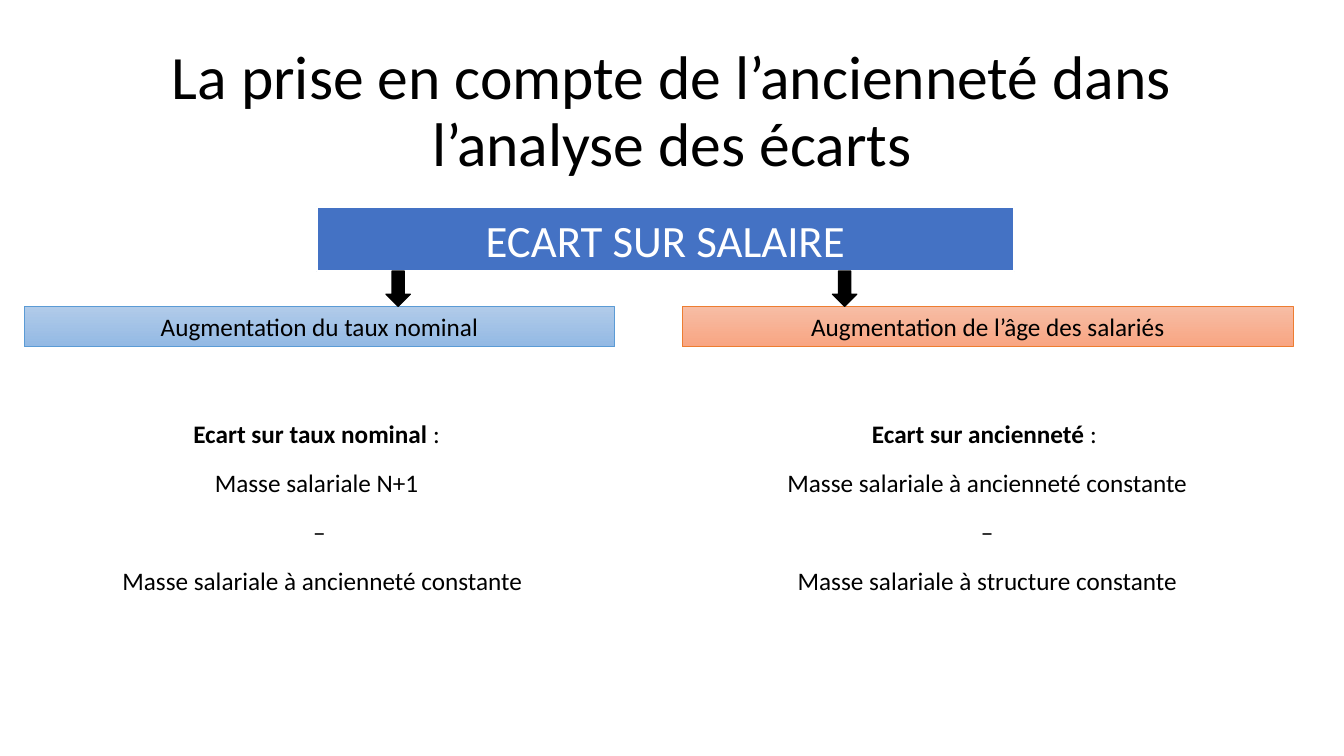
from dataclasses import dataclass

from pptx import Presentation
from pptx.dml.color import RGBColor
from pptx.enum.shapes import MSO_SHAPE
from pptx.enum.text import MSO_ANCHOR, MSO_AUTO_SIZE, PP_ALIGN
from pptx.shapes.autoshape import Shape
from pptx.slide import Slide
from pptx.text.text import TextFrame
from pptx.util import Cm, Pt

RECTANGLE = MSO_SHAPE.RECTANGLE
DOWN_ARROW = MSO_SHAPE.DOWN_ARROW
MIDDLE = MSO_ANCHOR.MIDDLE
CENTER = PP_ALIGN.CENTER
NO_AUTOFIT = MSO_AUTO_SIZE.NONE
FIT_SHAPE = MSO_AUTO_SIZE.SHAPE_TO_FIT_TEXT

BLACK = RGBColor(0x00, 0x00, 0x00)
WHITE = RGBColor(0xFF, 0xFF, 0xFF)
BANNER_BLUE = RGBColor(0x44, 0x72, 0xC4)
BLUE_LINE = RGBColor(0x5B, 0x9B, 0xD5)
BLUE_TOP = RGBColor(0xB1, 0xCB, 0xE9)
BLUE_BOTTOM = RGBColor(0x93, 0xB9, 0xE4)
ORANGE_LINE = RGBColor(0xED, 0x7D, 0x31)
ORANGE_TOP = RGBColor(0xF7, 0xBD, 0xA5)
ORANGE_BOTTOM = RGBColor(0xF8, 0xA5, 0x82)

FONT = "Calibri"
BODY_SIZE = 18
ARROW_TOP, CAUSE_TOP, FORMULA_TOP = 6.83, 7.72, 10.31


@dataclass(frozen=True)
class Area:
    left: float
    top: float
    width: float
    height: float

    def lengths(self) -> tuple[Cm, Cm, Cm, Cm]:
        return Cm(self.left), Cm(self.top), Cm(self.width), Cm(self.height)


@dataclass(frozen=True)
class Branch:
    cause: str
    cause_area: Area
    gradient: tuple[RGBColor, RGBColor]
    line: RGBColor
    arrow_left: float
    heading: str
    terms: tuple[str, ...]
    formula_area: Area


BRANCHES = (
    Branch("Augmentation du taux nominal", Area(0.61, CAUSE_TOP, 14.88, 1.02),
           (BLUE_TOP, BLUE_BOTTOM), BLUE_LINE, 9.73,
           "Ecart sur taux nominal",
           ("Masse salariale N+1 ", "–", " Masse salariale à ancienneté constante"),
           Area(0.61, FORMULA_TOP, 14.88, 4.8)),
    Branch("Augmentation de l’âge des salariés", Area(17.2, CAUSE_TOP, 15.39, 1.02),
           (ORANGE_TOP, ORANGE_BOTTOM), ORANGE_LINE, 20.98,
           "Ecart sur ancienneté",
           ("Masse salariale à ancienneté constante", " – ",
            "Masse salariale à structure constante"),
           Area(16.41, FORMULA_TOP, 16.94, 4.8)),
)


def format_text(frame: TextFrame, size: float, color: RGBColor) -> None:
    frame.word_wrap = True
    for paragraph in frame.paragraphs:
        paragraph.alignment = CENTER
        for span in paragraph.runs:
            span.font.name = FONT
            span.font.size = Pt(size)
            span.font.color.rgb = color


def add_title(page: Slide, text: str, area: Area) -> None:
    title = page.shapes.title
    title.left, title.top, title.width, title.height = area.lengths()
    frame = title.text_frame
    frame.text = text
    frame.auto_size = NO_AUTOFIT
    frame.vertical_anchor = MIDDLE
    frame.paragraphs[0].line_spacing = 0.9
    format_text(frame, 44, BLACK)


def add_box(page: Slide, kind: MSO_SHAPE, area: Area, line: RGBColor, weight: float) -> Shape:
    box = page.shapes.add_shape(kind, *area.lengths())
    box.shadow.inherit = False
    box.line.color.rgb = line
    box.line.width = Pt(weight)
    return box


def add_label(box: Shape, text: str, size: float, color: RGBColor) -> None:
    frame = box.text_frame
    frame.text = text
    frame.auto_size = FIT_SHAPE
    format_text(frame, size, color)


def add_formula(page: Slide, branch: Branch) -> None:
    box = page.shapes.add_textbox(*branch.formula_area.lengths())
    frame = box.text_frame
    frame.text = "\n".join(("", *branch.terms))
    heading = frame.paragraphs[0]
    for text, bold in ((branch.heading, True), (" : ", False)):
        span = heading.add_run()
        span.text = text
        span.font.bold = bold
    for paragraph in frame.paragraphs:
        paragraph.line_spacing = 1.15
        paragraph.space_after = Pt(10)
    format_text(frame, BODY_SIZE, BLACK)
    frame.auto_size = FIT_SHAPE


def add_branch(page: Slide, branch: Branch) -> None:
    # Cause
    cause = add_box(page, RECTANGLE, branch.cause_area, branch.line, 0.5)
    cause.fill.gradient()
    cause.fill.gradient_angle = 270
    for stop, color in zip(cause.fill.gradient_stops, branch.gradient):
        stop.color.rgb = color
    add_label(cause, branch.cause, BODY_SIZE, BLACK)

    # Arrow from the banner
    arrow = add_box(page, DOWN_ARROW, Area(branch.arrow_left, ARROW_TOP, 0.61, 0.89), BLACK, 1)
    arrow.fill.solid()
    arrow.fill.fore_color.rgb = BLACK

    # Formula
    add_formula(page, branch)


def main() -> None:
    deck = Presentation()
    deck.slide_width, deck.slide_height = Cm(33.87), Cm(19.05)
    page = deck.slides.add_slide(deck.slide_layouts.get_by_name("Title Only"))

    # Title and banner
    add_title(page, "La prise en compte de l’ancienneté dans l’analyse des écarts",
              Area(2.33, 1.01, 29.21, 3.68))
    banner = add_box(page, RECTANGLE, Area(7.98, 5.21, 17.58, 1.63), WHITE, 1.5)
    banner.fill.solid()
    banner.fill.fore_color.rgb = BANNER_BLUE
    add_label(banner, "ECART SUR SALAIRE", 32, WHITE)

    # The two components of the gap
    for branch in BRANCHES:
        add_branch(page, branch)

    deck.save("out.pptx")


if __name__ == "__main__":
    main()
